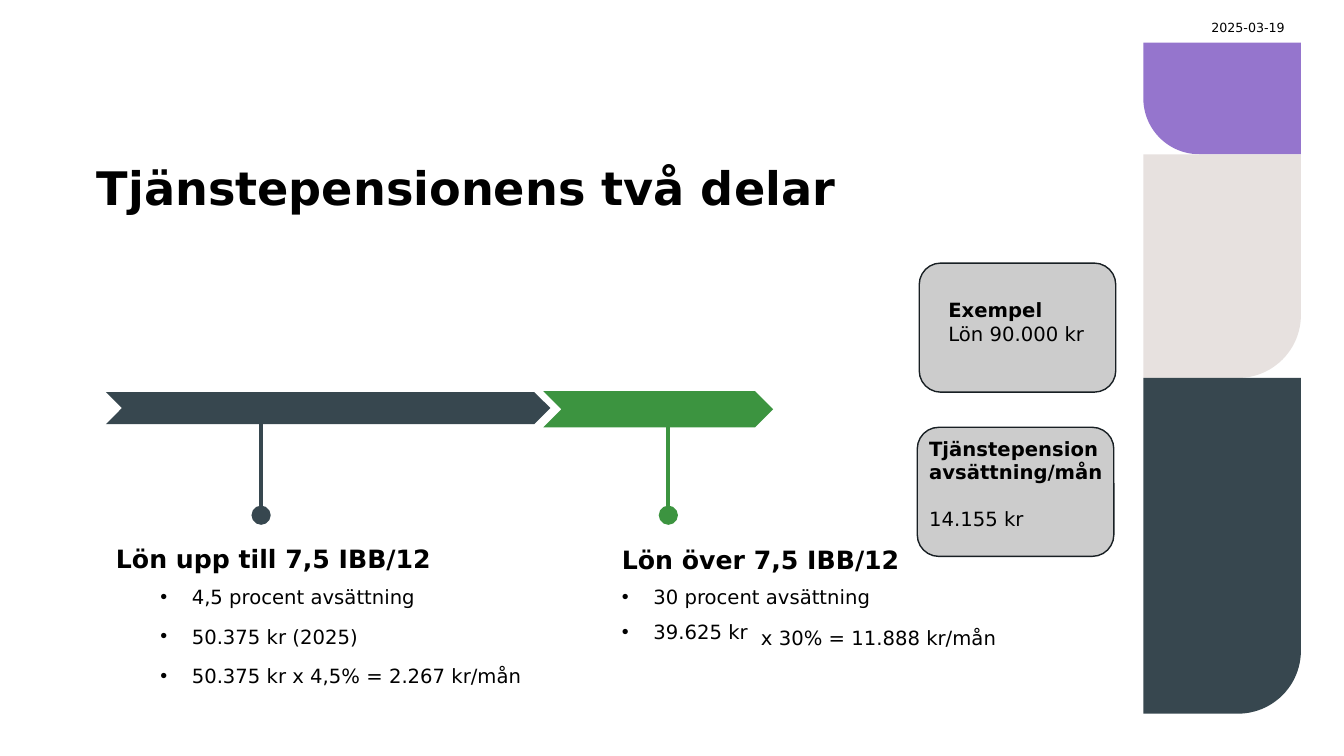
from math import cos, pi, sin

from lxml.etree import SubElement
from pptx import Presentation
from pptx.dml.color import RGBColor
from pptx.enum.shapes import MSO_CONNECTOR, MSO_SHAPE
from pptx.enum.text import MSO_ANCHOR, MSO_AUTO_SIZE, PP_ALIGN
from pptx.oxml.ns import qn
from pptx.util import Pt

# Content
FONT = "DejaVu Sans"
COLORS = {"slate": "37474F", "green": "3C9440", "purple": "9575CD", "sand": "E7E1DF",
          "grey": "CCCCCC", "edge": "181F23", "text": "000000"}
TITLE = "Tjänstepensionens två delar"
DATE = "2025-03-19"
SUM = "x 30% = 11.888 kr/mån"

# Chevron box, stem x, heading box, list box, gap between list items
PARTS = [
    {"color": "slate", "chevron": (75.6, 280, 317.5, 23), "stem": 186.5,
     "heading": ("Lön upp till 7,5 IBB/12", (75.6, 384.5, 273, 29)),
     "items": ["4,5 procent avsättning", "50.375 kr (2025)", "50.375 kr x 4,5% = 2.267 kr/mån"],
     "list": (107.3, 414, 328, 80), "gap": 11.6},
    {"color": "green", "chevron": (388.1, 279.4, 164.2, 25.9), "stem": 477.4,
     "heading": ("Lön över 7,5 IBB/12", (437, 385.2, 233, 29)),
     "items": ["30 procent avsättning", "39.625 kr"],
     "list": (437, 414.4, 233, 50), "gap": 8},
]
STEM_TOP, STEM_BOTTOM = 302.4, 368

# Box position, text position, (line, bold, space before)
BOX_SIZE = (140.4, 92.2)
BOXES = [
    ((656.6, 187.9), (670.3, 209.5), [("Exempel", True, 0), ("Lön 90.000 kr", False, 0)]),
    ((655.2, 305.2), (656.6, 308.2), [("Tjänstepension", True, 0), ("avsättning/mån", True, 0),
                                      ("14.155 kr", False, 16.5)]),
]

# Colour, height, corner radius, rounded bottom corner
PANEL_LEFT, PANEL_TOP, PANEL_WIDTH = 816.7, 30.4, 112.6
PANELS = [("purple", 79.8, 40, "left"), ("sand", 159.8, 45, "right"),
          ("slate", 239.8, 45, "right")]

prs = Presentation()
prs.slide_width, prs.slide_height = Pt(960), Pt(540)
slide = prs.slides.add_slide(prs.slide_layouts[4])
shapes = slide.shapes


def rgb(name):
    return RGBColor.from_string(COLORS[name])


def paint(shape, fill, edge=None):
    shape.shadow.inherit = False
    shape.fill.solid()
    shape.fill.fore_color.rgb = rgb(fill)
    if edge:
        shape.line.color.rgb = rgb(edge)
        shape.line.width = Pt(1)
    else:
        shape.line.fill.background()


def place(shape, box):
    shape.left, shape.top, shape.width, shape.height = map(Pt, box)


def write(shape, lines, size, inset=None, wrap=True, gap=0, bullet=False, spacing=1.0):
    frame = shape.text_frame
    frame.word_wrap = wrap
    frame.auto_size = MSO_AUTO_SIZE.NONE
    frame.vertical_anchor = MSO_ANCHOR.TOP
    if inset is not None:
        frame.margin_left = frame.margin_right = Pt(inset)
        frame.margin_top = frame.margin_bottom = Pt(inset)
    for i, (line, bold, before) in enumerate(lines):
        paragraph = frame.add_paragraph() if i else frame.paragraphs[0]
        paragraph.alignment = PP_ALIGN.LEFT
        paragraph.line_spacing = spacing
        paragraph.space_before, paragraph.space_after = Pt(before), Pt(gap)
        run = paragraph.add_run()
        run.text = line
        run.font.name, run.font.size, run.font.bold = FONT, Pt(size), bold
        run.font.color.rgb = rgb("text")
        if bullet:
            props = paragraph._p.get_or_add_pPr()
            props.set("marL", str(Pt(22.5)))
            props.set("indent", str(-Pt(22.5)))
            SubElement(props, qn("a:buFont"), typeface="Arial")
            SubElement(props, qn("a:buChar"), char="•")


def add_text(box, lines, size, **options):
    text = shapes.add_textbox(*map(Pt, box))
    write(text, lines, size, **options)


# Side panels, each with one rounded bottom corner
panel_top = PANEL_TOP
for color, height, radius, corner in PANELS:
    bottom = panel_top + height
    side = 1 if corner == "right" else -1
    round_x = PANEL_LEFT + (PANEL_WIDTH if side == 1 else 0)
    square_x = PANEL_LEFT + (0 if side == 1 else PANEL_WIDTH)
    arc = [(round_x - side * radius * (1 - cos(step * pi / 48)),
            bottom - radius * (1 - sin(step * pi / 48))) for step in range(25)]
    outline = arc + [(square_x, bottom), (square_x, panel_top), (round_x, panel_top)]
    points = [(Pt(x), Pt(y)) for x, y in outline]
    builder = shapes.build_freeform(*points[0], scale=1.0)
    builder.add_line_segments(points[1:], close=True)
    paint(builder.convert_to_shape(), color)
    panel_top = bottom

# Title
title = shapes.title
place(title, (69.1, 110, 698.4, 82.8))
write(title, [(TITLE, True, 0)], 33, inset=0, spacing=1.1)

# The two parts: chevron, stem, heading and list
for number, part in enumerate(PARTS):
    chevron = shapes.add_shape(MSO_SHAPE.CHEVRON, *map(Pt, part["chevron"]))
    paint(chevron, part["color"])

    stem = shapes.add_connector(MSO_CONNECTOR.STRAIGHT, Pt(part["stem"]), Pt(STEM_TOP),
                                Pt(part["stem"]), Pt(STEM_BOTTOM))
    stem.line.color.rgb = rgb(part["color"])
    stem.line.width = Pt(2.75)
    SubElement(stem.line._get_or_add_ln(), qn("a:tailEnd"), type="oval", w="lg", len="lg")
    SubElement(stem._element.spPr, qn("a:effectLst"))

    heading = slide.placeholders[1 + 2 * number]
    heading_text, heading_box = part["heading"]
    place(heading, heading_box)
    write(heading, [(heading_text, True, 0)], 18)

    items = slide.placeholders[2 + 2 * number]
    place(items, part["list"])
    write(items, [(item, False, 0) for item in part["items"]], 14, gap=part["gap"], bullet=True)

# Example boxes
for box_at, text_at, lines in BOXES:
    box = shapes.add_shape(MSO_SHAPE.ROUNDED_RECTANGLE, *map(Pt, box_at + BOX_SIZE))
    paint(box, "grey", "edge")
    add_text(text_at + (150, 75), lines, 14)

# Sum beside the second list, and date
add_text((543.6, 447, 175, 17), [(SUM, False, 0)], 14, inset=0, wrap=False)
add_text((858.2, 10.8, 70.6, 10.8), [(DATE, False, 0)], 9)

prs.save("out.pptx")
